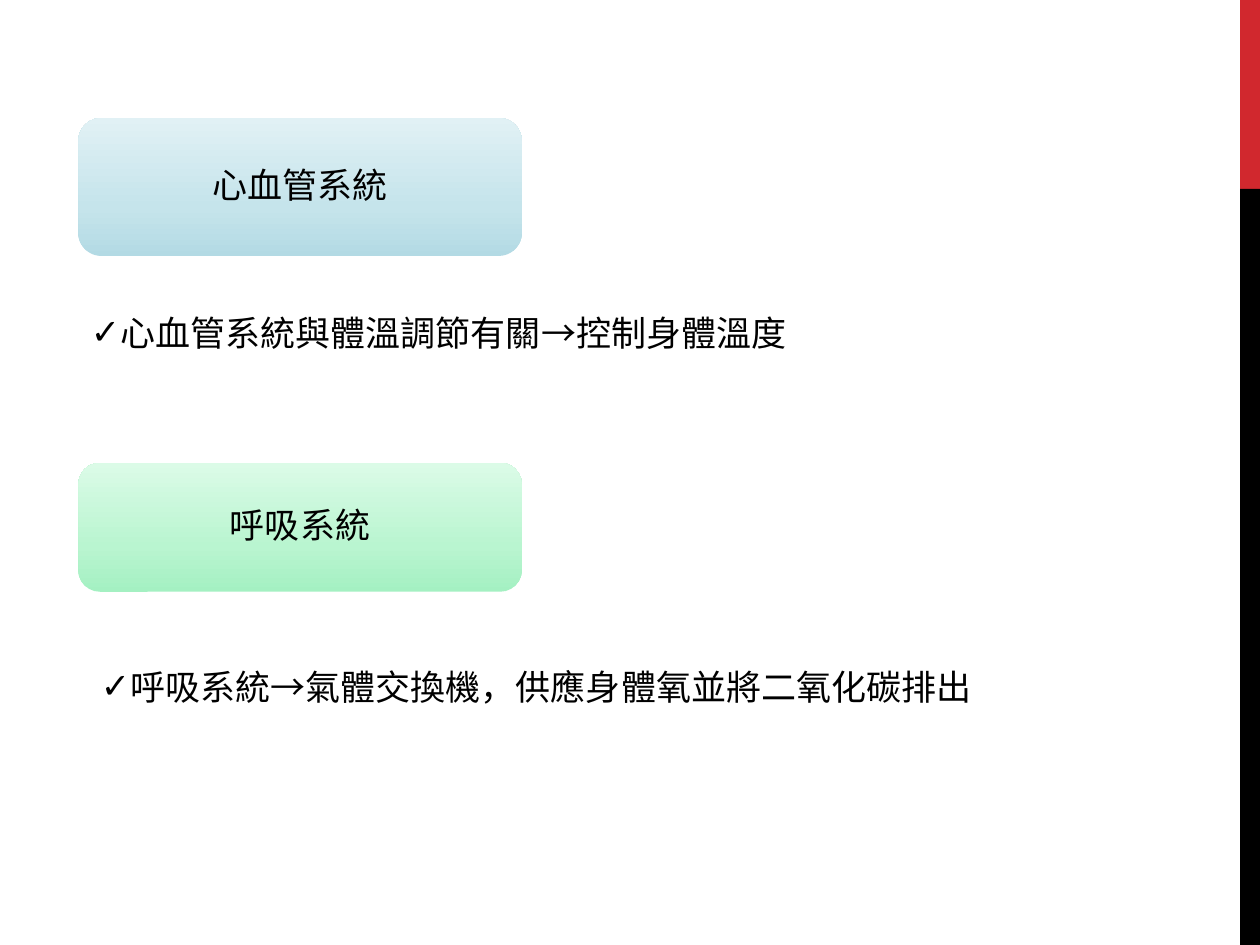
from copy import deepcopy

from lxml import etree
from pptx import Presentation
from pptx.dml.color import RGBColor
from pptx.enum import shapes, text
from pptx.oxml.ns import qn
from pptx.util import Cm, Pt

BLACK = RGBColor(0x00, 0x00, 0x00)
RED = RGBColor(0xD1, 0x28, 0x2E)
BLUES = [RGBColor.from_string(c) for c in ("B3DAE4", "C5E4EB", "E1F1F5")]
GREENS = [RGBColor.from_string(c) for c in ("A4F0C2", "B9F5D0", "DBFBE7")]
STOPS = (0, 0.35, 1)

PAGE_W, PAGE_H = 25.4, 19.05
STRIPE_W = 0.4
LABEL_LEFT, LABEL_W = 1.58, 8.94
NOTE_W, NOTE_H = 20.04, 2.82

STRIPES = [(0, 3.81, RED), (3.81, PAGE_H - 3.81, BLACK)]
# label, top, height, gradient, note, note left, note top
SYSTEMS = [
    ("心血管系統", 2.38, 2.78, BLUES,
     "心血管系統與體溫調節有關→控制身體溫度", 1.58, 6.15),
    ("呼吸系統", 9.33, 2.6, GREENS,
     "呼吸系統→氣體交換機，供應身體氧並將二氧化碳排出", 1.78, 13.28),
]


def add_shape(page, kind, left, top, width, height):
    shape = page.shapes.add_shape(kind, Cm(left), Cm(top), Cm(width), Cm(height))
    shape.shadow.inherit = False
    shape.line.fill.background()
    return shape


def fill_upwards(shape, colours):
    """Fill with a three-stop gradient that runs from bottom to top."""
    fill = shape.fill
    fill.gradient()
    fill.gradient_angle = 90
    first = shape._element.spPr.find(".//" + qn("a:gs"))
    first.addnext(deepcopy(first))
    for stop, position, colour in zip(fill.gradient_stops, STOPS, colours):
        stop.position = position
        stop.color.rgb = colour


def style_text(para):
    para.font.name = "Arial"
    para.font.size = Pt(20)
    para.font.color.rgb = BLACK


def add_label(page, words, top, height, colours):
    box = add_shape(page, shapes.MSO_SHAPE.ROUNDED_RECTANGLE,
                    LABEL_LEFT, top, LABEL_W, height)
    fill_upwards(box, colours)
    frame = box.text_frame
    frame.word_wrap = True
    frame.vertical_anchor = text.MSO_ANCHOR.MIDDLE
    para = frame.paragraphs[0]
    para.text = words
    para.alignment = text.PP_ALIGN.CENTER
    para.line_spacing = 0.9
    para.space_after = Pt(7)
    style_text(para)


def write_note(box, words, left, top):
    box.left, box.top, box.width, box.height = map(Cm, (left, top, NOTE_W, NOTE_H))
    frame = box.text_frame
    frame.word_wrap = True
    frame.auto_size = text.MSO_AUTO_SIZE.NONE
    para = frame.paragraphs[0]
    para.text = words
    para.space_before = Pt(0)
    props = para._p.get_or_add_pPr()
    props.set("marL", "0")
    props.set("indent", "0")
    etree.SubElement(props, qn("a:buChar")).set("char", "✓")
    style_text(para)


def main():
    deck = Presentation()
    deck.slide_width, deck.slide_height = Cm(PAGE_W), Cm(PAGE_H)
    page = deck.slides.add_slide(deck.slide_layouts.get_by_name("Two Content"))
    title, *notes = page.placeholders
    title._element.getparent().remove(title._element)

    for top, height, colour in STRIPES:
        stripe = add_shape(page, shapes.MSO_SHAPE.RECTANGLE,
                           PAGE_W - STRIPE_W, top, STRIPE_W, height)
        stripe.fill.solid()
        stripe.fill.fore_color.rgb = colour

    for box, (label, top, height, colours, note, left, note_top) in zip(notes, SYSTEMS):
        add_label(page, label, top, height, colours)
        write_note(box, note, left, note_top)

    deck.save("out.pptx")


if __name__ == "__main__":
    main()
